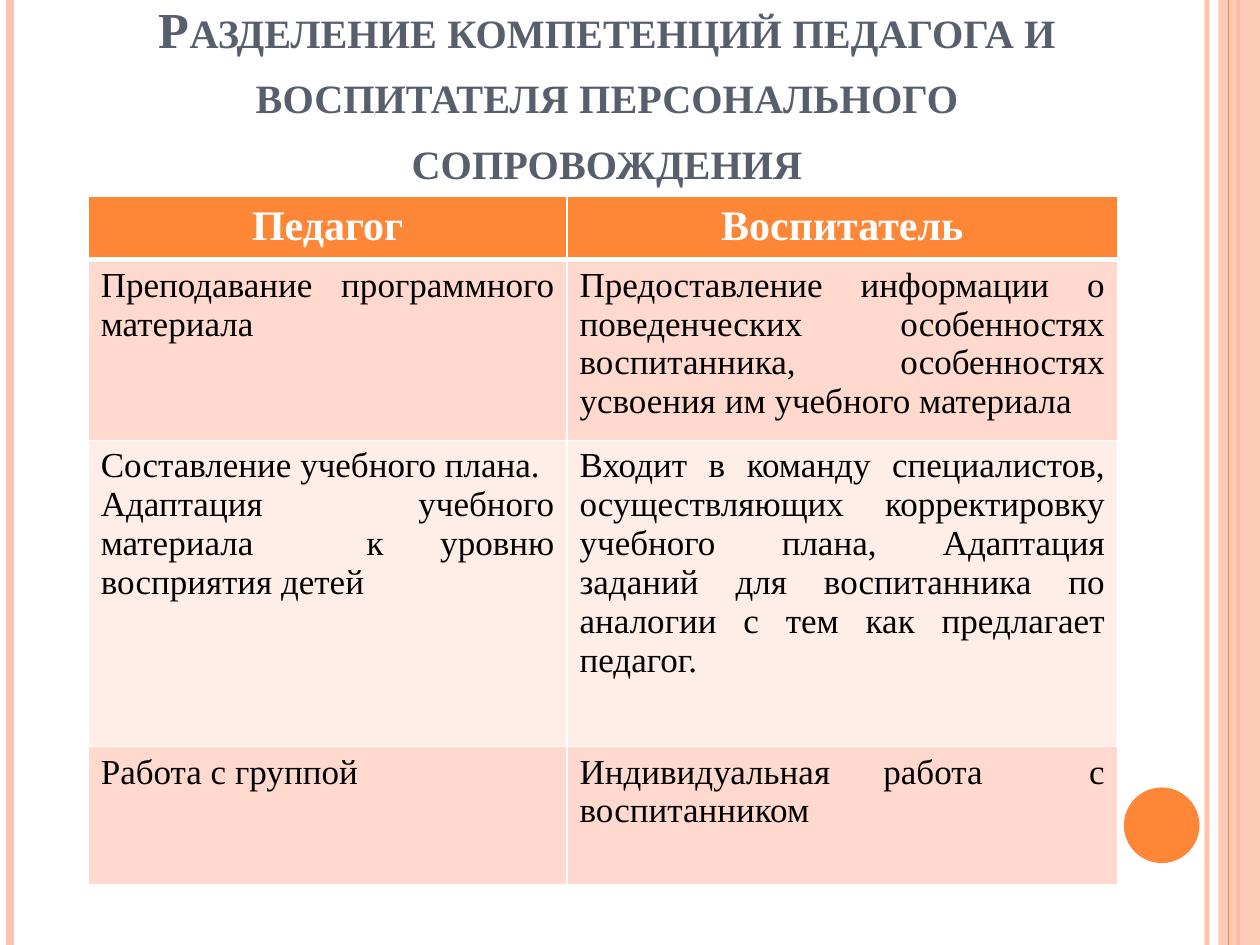
from lxml.etree import SubElement
from pptx import Presentation
from pptx.dml.color import RGBColor
from pptx.enum.shapes import MSO_CONNECTOR, MSO_SHAPE
from pptx.enum.text import MSO_ANCHOR, PP_ALIGN
from pptx.oxml.ns import qn
from pptx.util import Inches, Pt

FONT = "Times New Roman"
ORANGE, PEACH, WHITE = "FE8637", "FEC3AE", "FFFFFF"
SLIDE_W, SLIDE_H = 10, 7.5

TITLE = "Разделение компетенций педагога и воспитателя персонального сопровождения"
HEADER = ["Педагог", "Воспитатель"]
# Each cell is a list of paragraphs
DUTIES = [
    (["Преподавание программного материала"],
     ["Предоставление информации о поведенческих особенностях воспитанника, "
      "особенностях усвоения им учебного материала"]),
    (["Составление учебного плана.",
      "Адаптация учебного материала  к уровню восприятия детей"],
     ["Входит в команду специалистов, осуществляющих корректировку учебного плана, "
      "Адаптация заданий для воспитанника по аналогии с тем как предлагает педагог."]),
    (["Работа с группой"],
     ["Индивидуальная работа  с воспитанником"]),
]
COL_WIDTHS = [3.8, 4.37]
ROW_HEIGHTS = [0.5, 1.43, 2.43, 1.1]
BAND_FILLS = ["FFD9CE", "FFEDE8"]

# x, colour, width in points, opacity in percent
STRIPES = [(9.58, PEACH, 3, 93), (0.08, PEACH, 4.5, 100), (9.83, ORANGE, 1.5, 100)]
THIN_STRIPE = (9.75, ORANGE, 0.75, 100)


def rgb(color):
    return RGBColor.from_string(color)


def set_opacity(fill_parent, percent):
    color = fill_parent.find(qn("a:solidFill"))[0]
    SubElement(color, qn("a:alpha"), val=str(percent * 1000))


def add_stripe(slide, x, color, width, opacity):
    stripe = slide.shapes.add_connector(
        MSO_CONNECTOR.STRAIGHT, Inches(x), Inches(0), Inches(x), Inches(SLIDE_H))
    stripe.line.color.rgb = rgb(color)
    stripe.line.width = Pt(width)
    properties = stripe._element.spPr
    if opacity < 100:
        set_opacity(properties.find(qn("a:ln")), opacity)
    SubElement(properties, qn("a:effectLst"))


def add_plain_shape(slide, preset, box, color):
    shape = slide.shapes.add_shape(preset, *map(Inches, box))
    shape.shadow.inherit = False
    shape.fill.solid()
    shape.fill.fore_color.rgb = rgb(color)
    shape.line.fill.background()
    return shape


def add_run(paragraph, text, size, color, bold, align):
    paragraph.alignment = align
    run = paragraph.add_run()
    run.text = text
    run.font.name = FONT
    run.font.size = Pt(size)
    run.font.bold = bold
    run.font.color.rgb = rgb(color)
    return run


def set_borders(cell, widths):
    properties = cell._tc.get_or_add_tcPr()
    for index, (side, width) in enumerate(zip("LRTB", widths)):
        border = SubElement(properties, qn(f"a:ln{side}"), w=str(Pt(width)))
        fill = SubElement(border, qn("a:solidFill"))
        SubElement(fill, qn("a:srgbClr"), val=WHITE)
        properties.remove(border)
        properties.insert(index, border)


def fill_cell(cell, paragraphs, row):
    is_header = row == 0
    cell.fill.solid()
    cell.fill.fore_color.rgb = rgb(ORANGE if is_header else BAND_FILLS[(row - 1) % 2])
    set_borders(cell, (1, 1, 3 if row == 1 else 1, 3 if is_header else 1))
    frame = cell.text_frame
    for index, text in enumerate(paragraphs):
        paragraph = frame.add_paragraph() if index else frame.paragraphs[0]
        if is_header:
            add_run(paragraph, text, 24, WHITE, True, PP_ALIGN.CENTER)
        else:
            add_run(paragraph, text, 20, "000000", False, PP_ALIGN.JUSTIFY)


def main():
    prs = Presentation()
    prs.slide_width, prs.slide_height = Inches(SLIDE_W), Inches(SLIDE_H)
    slide = prs.slides.add_slide(prs.slide_layouts[6])

    # Side stripes, right band and circle
    for stripe in STRIPES:
        add_stripe(slide, *stripe)
    band = add_plain_shape(slide, MSO_SHAPE.RECTANGLE, (9.67, 0, 0.33, SLIDE_H), PEACH)
    set_opacity(band._element.spPr, 87)
    add_stripe(slide, *THIN_STRIPE)
    add_plain_shape(slide, MSO_SHAPE.OVAL, (8.92, 6.25, 0.6, 0.6), ORANGE)

    # Title
    title = slide.shapes.add_textbox(*map(Inches, (0.5, 0.3, 8.64, 1.25))).text_frame
    title.word_wrap = True
    title.vertical_anchor = MSO_ANCHOR.BOTTOM
    heading = title.paragraphs[0]
    heading.line_spacing = 1.08
    run = add_run(heading, TITLE, 28.8, "575F6D", True, PP_ALIGN.CENTER)
    run.font._element.set("cap", "small")

    # Table of duties
    rows = [[[name] for name in HEADER], *DUTIES]
    table = slide.shapes.add_table(
        len(rows), len(HEADER), Inches(0.7), Inches(1.56),
        Inches(sum(COL_WIDTHS)), Inches(sum(ROW_HEIGHTS))).table
    for column, width in zip(table.columns, COL_WIDTHS):
        column.width = Inches(width)
    for r, (height, cells) in enumerate(zip(ROW_HEIGHTS, rows)):
        table.rows[r].height = Inches(height)
        for c, paragraphs in enumerate(cells):
            fill_cell(table.cell(r, c), paragraphs, r)

    prs.save("out.pptx")


if __name__ == "__main__":
    main()
